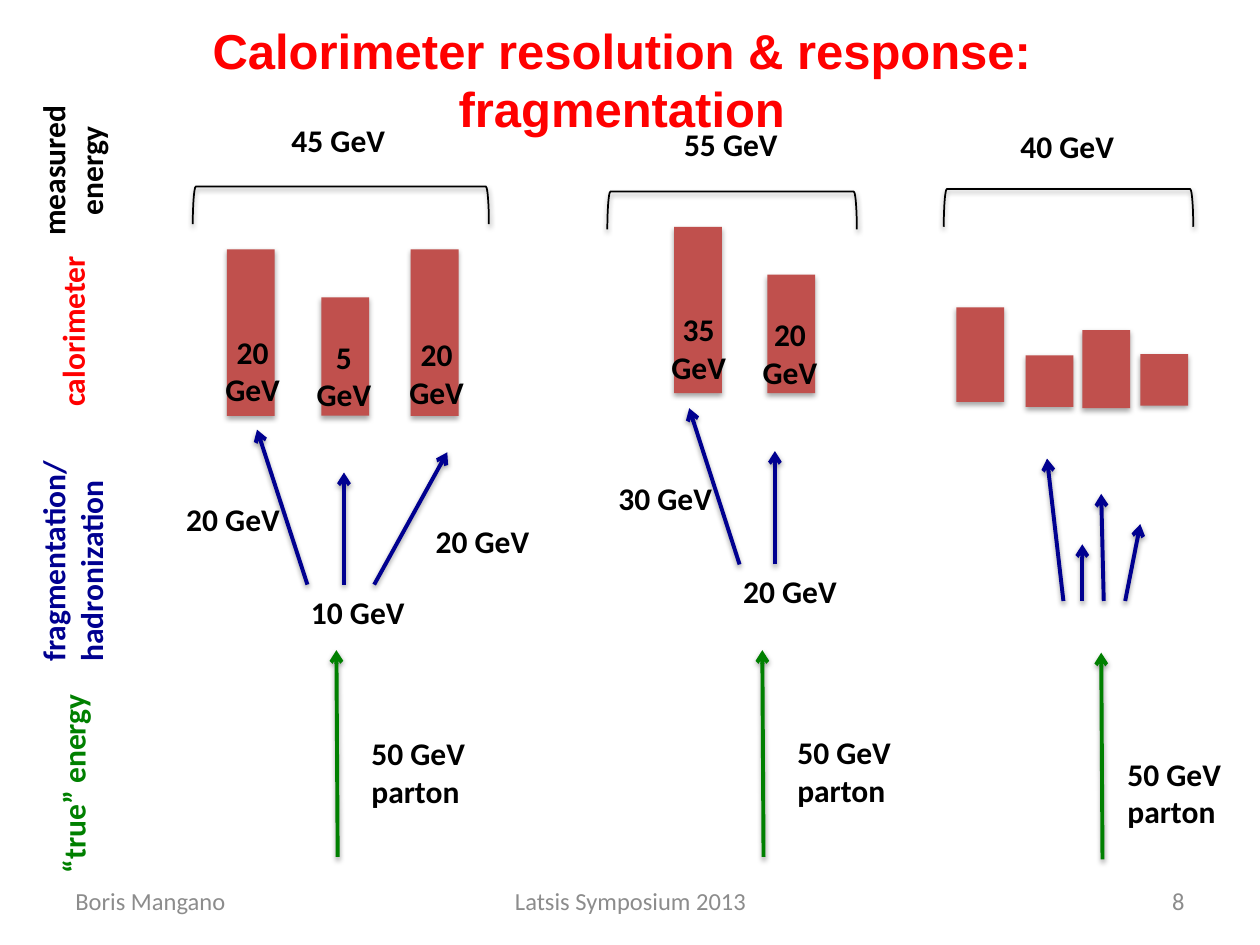
import pptx
import pptx.util
import pptx.dml.color
import pptx.enum.shapes
import pptx.enum.text
import pptx.oxml
import pptx.oxml.ns

Inches = pptx.util.Inches
Pt = pptx.util.Pt
Align = pptx.enum.text.PP_ALIGN
Anchor = pptx.enum.text.MSO_ANCHOR
Shape = pptx.enum.shapes.MSO_SHAPE

BLACK, RED, BLUE, GREEN, GRAY, BAR = "000000", "FF0000", "000090", "008000", "8C8C8C", "C0504D"
BAR_WIDTH = 0.38

deck = pptx.Presentation()
deck.slide_width, deck.slide_height = Inches(10), Inches(7.5)
page = deck.slides.add_slide(deck.slide_layouts[5])


def write(text, left, top, width, height, box=None, size=18, font="Calibri", color=BLACK,
          bold=True, align=Align.LEFT, anchor=Anchor.TOP, rotation=0):
    """Put formatted text in a new text box, or in the given placeholder."""
    if box is None:
        box = page.shapes.add_textbox(0, 0, 0, 0)
    box.left, box.top, box.width, box.height = map(Inches, (left, top, width, height))
    box.rotation = rotation
    frame = box.text_frame
    frame.word_wrap = True
    frame.auto_size = pptx.enum.text.MSO_AUTO_SIZE.NONE
    frame.vertical_anchor = anchor
    para = frame.paragraphs[0]
    para.alignment = align
    span = para.add_run()
    span.text = text
    span.font.size, span.font.name, span.font.bold = Pt(size), font, bold
    span.font.color.rgb = pptx.dml.color.RGBColor.from_string(color)


def style(shape, line=None, width=1, fill=None, arrow=False, opacity=38):
    """Set line, fill, arrowhead and a soft shadow straight below."""
    if line:
        shape.line.color.rgb = pptx.dml.color.RGBColor.from_string(line)
        shape.line.width = Pt(width)
    else:
        shape.line.fill.background()
    if fill:
        shape.fill.solid()
        shape.fill.fore_color.rgb = pptx.dml.color.RGBColor.from_string(fill)
    elif not arrow:
        shape.fill.background()
    namespace = pptx.oxml.ns.nsdecls("a")
    if arrow:
        shape.line._get_or_add_ln().append(
            pptx.oxml.parse_xml(f'<a:tailEnd {namespace} type="arrow"/>'))
    else:
        shape.shadow.inherit = False
        properties = shape._element.spPr
        properties.remove(properties.find(pptx.oxml.ns.qn("a:effectLst")))
    shape._element.spPr.append(pptx.oxml.parse_xml(
        f'<a:effectLst {namespace}><a:outerShdw blurRad="{Pt(3.1)}" dist="{Pt(1.7)}" '
        f'dir="5400000" rotWithShape="0"><a:srgbClr val="000000">'
        f'<a:alpha val="{opacity * 1000}"/></a:srgbClr></a:outerShdw></a:effectLst>'))


# Title
write("Calorimeter resolution & response: fragmentation", 0.91, 0.11, 8.05, 1.04,
      box=page.shapes.title, size=28, font="Arial", color=RED, align=Align.CENTER)

# Footer
for text, left, width, align in [
    ("Boris Mangano", 0.5, 2.33, Align.LEFT),
    ("Latsis Symposium 2013", 3.42, 3.17, Align.CENTER),
    ("8", 7.17, 2.33, Align.RIGHT),
]:
    write(text, left, 6.95, width, 0.4, size=14, color=GRAY, bold=False,
          align=align, anchor=Anchor.MIDDLE)

# Row labels, read from bottom to top
for text, left, top, width, height, color, align in [
    ("measured energy", -0.1, 1, 1.35, 0.71, BLACK, Align.CENTER),
    ("calorimeter", -0.31, 2.43, 1.77, 0.4, RED, Align.CENTER),
    ("fragmentation/hadronization", -0.42, 4, 1.99, 0.71, BLUE, Align.LEFT),
    ("“true” energy", -0.23, 6.02, 1.62, 0.4, GREEN, Align.CENTER),
]:
    write(text, left, top, width, height, color=color, align=align, rotation=270)

# One entry per event: each column of the slide
events = [
    {
        "measured": ("45 GeV", 1.61, 0.91, 2.15),
        "bracket": (1.53, 1.48, 2.35),  # left, top, span
        "bars": [(1.8, 1.98, 1.32), (3.26, 1.98, 1.32), (2.55, 2.36, 0.94)],
        "bar labels": [("20 GeV", 1.6, 2.59, 0.81), ("20 GeV", 3.06, 2.61, 0.81),
                       ("5 GeV", 2.4, 2.63, 0.66)],
        "hadrons": [(2.44, 4.64, 2.04, 3.41), (2.73, 4.64, 2.73, 3.75), (2.97, 4.64, 3.55, 3.59)],
        "hadron labels": [("20 GeV", 1.38, 3.92), ("10 GeV", 2.37, 4.66), ("20 GeV", 3.36, 4.09)],
        "parton": (2.68, 6.8),
        "parton label": (2.85, 5.78),
    },
    {
        "measured": ("55 GeV", 4.89, 0.94, 1.82),
        "bracket": (4.82, 1.52, 1.98),
        "bars": [(5.35, 1.8, 1.32), (6.09, 2.18, 0.94)],
        "bar labels": [("35 GeV", 5.14, 2.41, 0.81), ("20 GeV", 5.94, 2.45, 0.66)],
        "hadrons": [(5.87, 4.48, 5.47, 3.24), (6.15, 4.48, 6.15, 3.58)],
        "hadron labels": [("30 GeV", 4.81, 3.75), ("20 GeV", 5.8, 4.49)],
        "parton": (6.06, 6.8),
        "parton label": (6.23, 5.77),
    },
    {
        "measured": ("40 GeV", 7.56, 0.96, 1.82),
        "bracket": (7.49, 1.5, 1.98),
        "bars": [(7.59, 2.44, 0.75), (8.14, 2.82, 0.41), (8.59, 2.62, 0.62), (9.05, 2.81, 0.41)],
        "bar labels": [],
        "hadrons": [(8.59, 4.77, 8.59, 4.32), (8.76, 4.77, 8.74, 3.92),
                    (8.93, 4.77, 9.05, 4.16), (8.44, 4.77, 8.31, 3.64)],
        "hadron labels": [],
        "parton": (8.75, 6.82),
        "parton label": (8.85, 5.94),
    },
]

for event in events:
    # Parton and hadron arrows
    x, y = event["parton"]
    arrows = [(GREEN, (x, y, x - 0.01, y - 1.64))] + [(BLUE, ends) for ends in event["hadrons"]]
    for color, ends in arrows:
        arrow = page.shapes.add_connector(
            pptx.enum.shapes.MSO_CONNECTOR.STRAIGHT, *map(Inches, ends))
        style(arrow, line=color, width=2.25, arrow=True)
    write("50 GeV parton", *event["parton label"], 1.04, 0.71)
    for text, left, top in event["hadron labels"]:
        write(text, left, top, 1.04, 0.4)

    # Calorimeter bars
    for left, top, height in event["bars"]:
        bar = page.shapes.add_shape(
            Shape.RECTANGLE, *map(Inches, (left, top, BAR_WIDTH, height)))
        style(bar, fill=BAR, opacity=35)
    for text, left, top, width in event["bar labels"]:
        write(text, left, top, width, 0.71, align=Align.CENTER)

    # Bracket over the bars: an upright bracket turned about its centre
    left, top, span = event["bracket"]
    depth = 0.3
    bracket = page.shapes.add_shape(Shape.LEFT_BRACKET, *map(Inches, (
        left + (span - depth) / 2, top - (span - depth) / 2, depth, span)))
    bracket.rotation = 90
    style(bracket, line=BLACK)
    text, left, top, width = event["measured"]
    write(text, left, top, width, 0.4, align=Align.CENTER)

deck.save("out.pptx")
